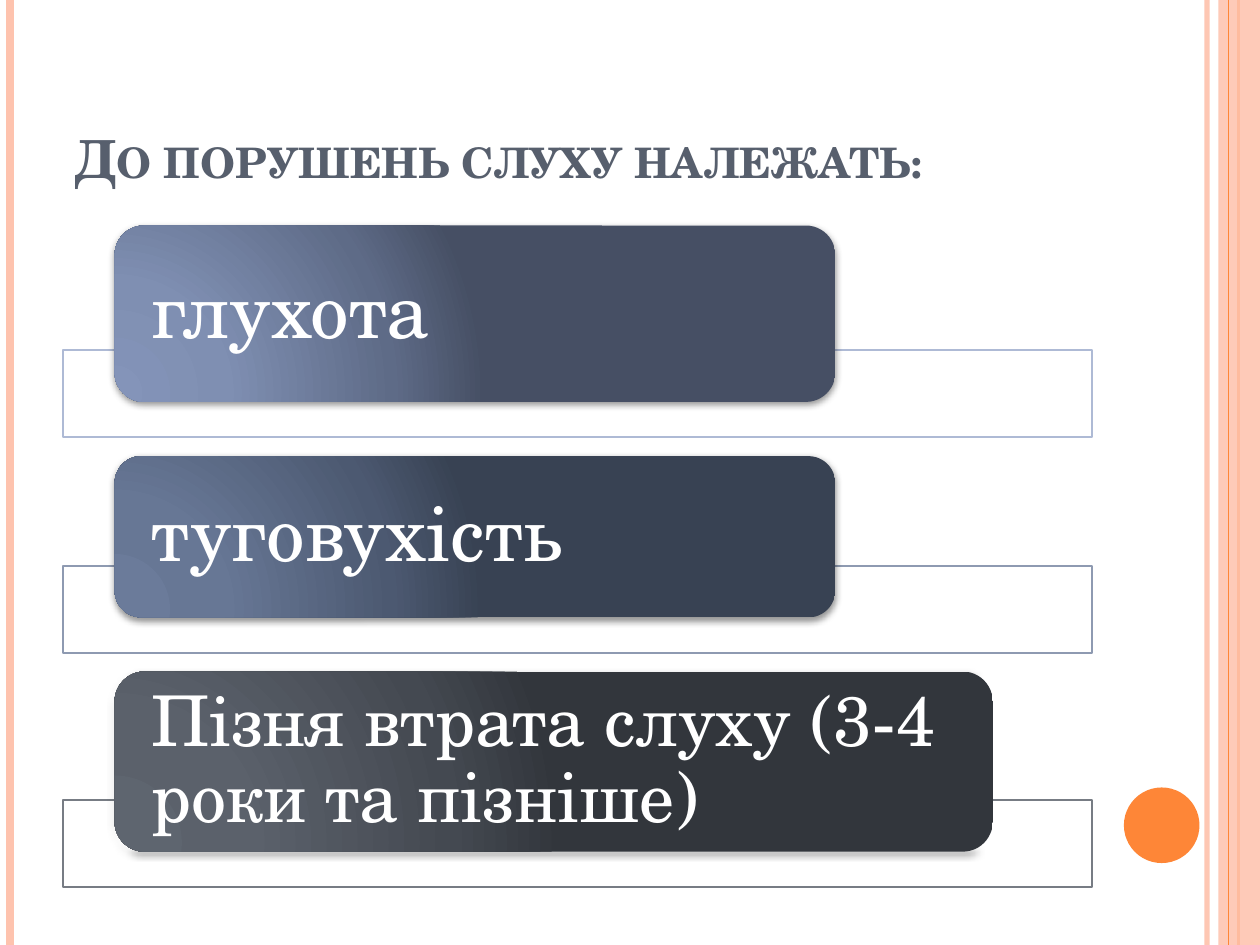
from lxml import etree
from pptx import Presentation
from pptx import util as u
from pptx.dml.color import RGBColor
from pptx.enum import shapes, text
from pptx.oxml import parse_xml
from pptx.oxml.ns import nsdecls, qn

FONT = "TeX Gyre Schola"
COLORS = {
    "white": "FFFFFF",
    "title": "575F6D",
    "peach": "FEC3AE",
    "orange": "FE8637",
    "shade": "000000",
}
STOPS = (0, 30, 75, 100)
LEFT, WIDTH = 0.5, 8.17
CARD_X, PAD = 0.91, 0.07
BAR_H, DROP = 0.69, 0.28  # each bar ends DROP below its card

# top, width, height, font size, bar line, gradient colours, words
CARDS = [
    (1.79, 5.72, 1.4, 44, "AEBAD5",
     ("8494B9", "7F8FB2", "5E6B87", "464F64"), "глухота"),
    (3.62, 5.72, 1.28, 44, "8E9AB1",
     ("6B7B9A", "677795", "4C5971", "384253"), "туговухість"),
    (5.33, 6.97, 1.43, 40, "777C84",
     ("5E656F", "5B616B", "444951", "32363C"),
     "Пізня втрата слуху (3-4 роки та пізніше)"),
]


def rgb(name):
    return RGBColor.from_string(COLORS.get(name, name))


def fade(fill, pct):
    """Set the opacity of a solid fill, in percent."""
    for color in fill.iter(qn("a:srgbClr")):
        etree.SubElement(color, qn("a:alpha"), val=str(pct * 1000))


class Deck:
    def __init__(self):
        self.prs = Presentation()
        self.prs.slide_width = u.Inches(10)
        self.prs.slide_height = u.Inches(7.5)
        self.slide = self.prs.slides.add_slide(self.prs.slide_layouts[6])

    def stripe(self, x, color, width, alpha=100):
        """Draw a full-height vertical line."""
        line = self.slide.shapes.add_connector(
            shapes.MSO_CONNECTOR.STRAIGHT,
            u.Inches(x), 0, u.Inches(x), self.prs.slide_height)
        line.line.color.rgb = rgb(color)
        line.line.width = u.Pt(width)
        props = line._element.spPr
        if alpha < 100:
            fade(props, alpha)
        etree.SubElement(props, qn("a:effectLst"))

    def shape(self, kind, box, fill=None, alpha=100, line=None):
        item = self.slide.shapes.add_shape(kind, *map(u.Inches, box))
        item.shadow.inherit = False
        if fill:
            item.fill.solid()
            item.fill.fore_color.rgb = rgb(fill)
            if alpha < 100:
                fade(item._element.spPr, alpha)
        if line:
            item.line.color.rgb = rgb(line)
            item.line.width = u.Pt(1)
        else:
            item.line.fill.background()
        return item

    def card(self, box, colors):
        """Draw a rounded card with a radial gradient and a soft shadow."""
        item = self.shape(shapes.MSO_SHAPE.ROUNDED_RECTANGLE, box)
        stops = "".join(
            f'<a:gs pos="{pos * 1000}"><a:srgbClr val="{color}"/></a:gs>'
            for pos, color in zip(STOPS, colors))
        props = item._element.spPr
        props.find(qn("a:prstGeom")).addnext(parse_xml(
            f'<a:gradFill {nsdecls("a")} rotWithShape="1">'
            f'<a:gsLst>{stops}</a:gsLst><a:path path="circle">'
            '<a:fillToRect l="5000" t="100000" r="120000" b="10000"/>'
            '</a:path></a:gradFill>'))
        props.find(qn("a:effectLst")).append(parse_xml(
            f'<a:outerShdw {nsdecls("a")} blurRad="{u.Pt(4)}" '
            f'dist="{u.Pt(1.6)}" dir="5400000" rotWithShape="0">'
            f'<a:srgbClr val="{COLORS["shade"]}"><a:alpha val="42000"/>'
            '</a:srgbClr></a:outerShdw>'))

    def label(self, box, words, size, color, anchor):
        item = self.slide.shapes.add_textbox(*map(u.Inches, box))
        frame = item.text_frame
        frame.word_wrap = True
        frame.vertical_anchor = anchor
        frame.text = words
        font = frame.paragraphs[0].runs[0].font
        font.name, font.size = FONT, u.Pt(size)
        font.color.rgb = rgb(color)
        return frame

    def title(self, box, words):
        frame = self.label(box, words, 30, "title", text.MSO_ANCHOR.BOTTOM)
        run = frame.paragraphs[0].runs[0]
        run.font.bold = True
        run._r.get_or_add_rPr().set("cap", "small")

    def caption(self, box, words, size):
        frame = self.label(box, words, size, "white", text.MSO_ANCHOR.MIDDLE)
        frame.margin_left = frame.margin_right = u.Inches(0.22)
        frame.margin_top = frame.margin_bottom = 0
        frame.paragraphs[0].line_spacing = 0.9


def main():
    deck = Deck()
    rect = shapes.MSO_SHAPE.RECTANGLE
    deck.stripe(9.58, "peach", 3, 93)
    deck.stripe(0.08, "peach", 4.5)
    deck.stripe(9.83, "orange", 1.5)
    deck.shape(rect, (9.67, 0, 0.33, 7.5), "peach", 87)
    deck.stripe(9.75, "orange", 0.75)
    deck.shape(shapes.MSO_SHAPE.OVAL, (8.92, 6.25, 0.6, 0.6), "orange")
    deck.title((LEFT, 0.3, WIDTH, 1.25), "До порушень слуху належать:")

    for top, wide, high, size, line, colors, words in CARDS:
        bar = top + high + DROP - BAR_H
        deck.shape(rect, (LEFT, bar, WIDTH, BAR_H), "white", 90, line)
        deck.card((CARD_X, top, wide, high), colors)
        deck.caption((CARD_X + PAD, top + PAD, wide - 2 * PAD,
                      high - 2 * PAD), words, size)
    deck.prs.save("out.pptx")


if __name__ == "__main__":
    main()
